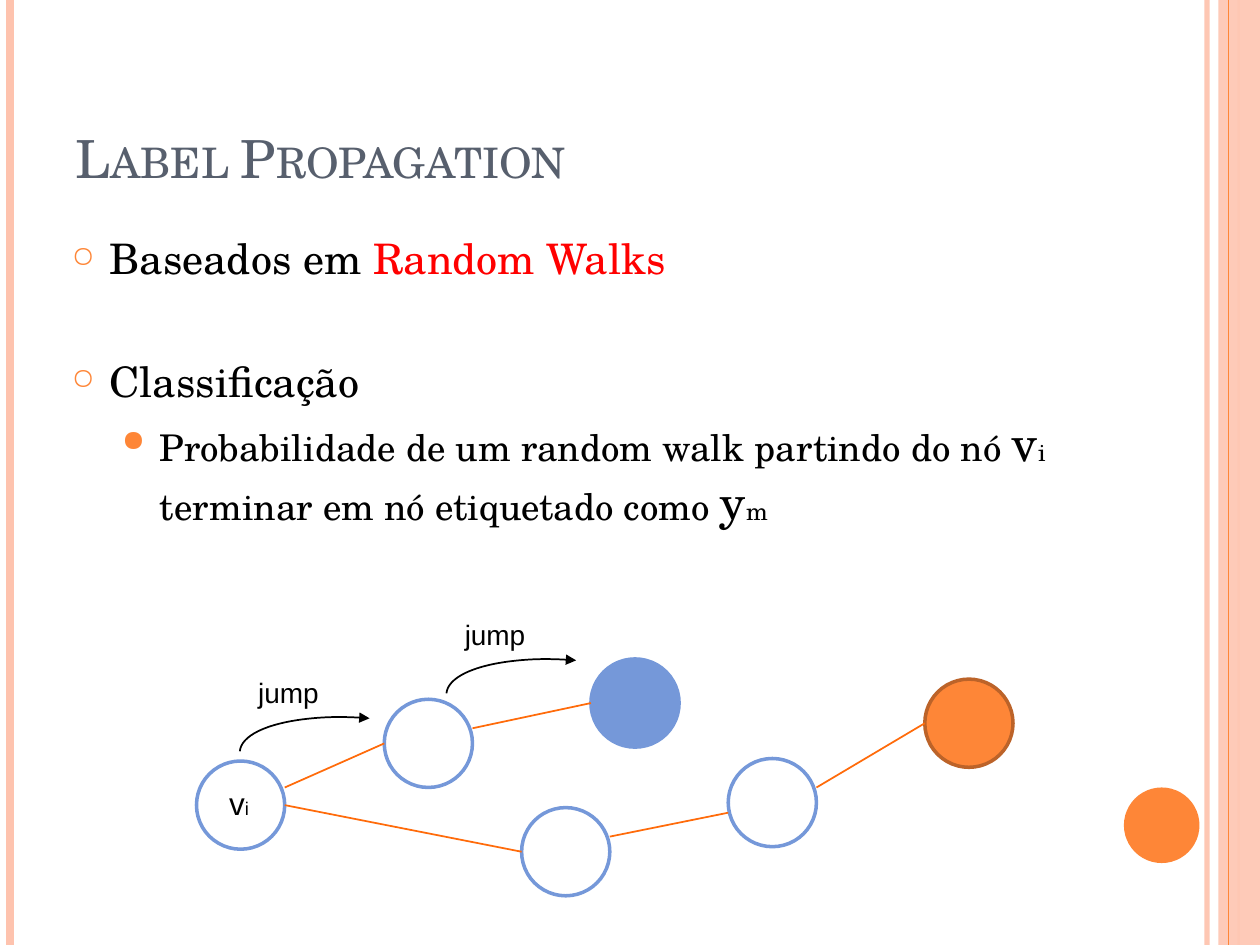
from lxml.etree import SubElement
from pptx import Presentation
from pptx.dml.color import RGBColor as RGB
from pptx.enum.shapes import MSO_CONNECTOR as CONN, MSO_SHAPE as SHAPE
from pptx.enum.text import MSO_ANCHOR as ANCHOR, MSO_AUTO_SIZE as AUTO
from pptx.oxml.ns import qn
from pptx.util import Inches, Pt

COLORS = {
    "peach": "FEC3AE", "orange": "FE8637", "rust": "BC6329", "edge": "FF6B0A",
    "blue": "7598D9", "title": "575F6D", "black": "000000", "red": "FF0000",
}
SERIF, SANS = "TeX Gyre Schola", "Arial"
COLS, ROWS = 100, 75


def add(parent, tag, **attrs):
    return SubElement(parent, qn(tag), {k: str(v) for k, v in attrs.items()})


class SlideBuilder:
    """Draws on one slide; lengths are columns and rows of the grid."""

    def __init__(self, prs):
        self.slide = prs.slides.add_slide(prs.slide_layouts[6])
        self.shapes = self.slide.shapes
        self.col = prs.slide_width / COLS
        self.row = prs.slide_height / ROWS

    def xy(self, x, y):
        return round(x * self.col), round(y * self.row)

    def paint(self, fill, color, alpha=100):
        fill.solid()
        fill.fore_color.rgb = RGB.from_string(COLORS[color])
        if alpha < 100:
            clr = fill._xPr.find(".//" + qn("a:srgbClr"))
            add(clr, "a:alpha", val=alpha * 1000)

    def shape(self, kind, x, y, w, h, fill=None, line=None, width=2, alpha=100):
        sp = self.shapes.add_shape(kind, *self.xy(x, y), *self.xy(w, h))
        sp.shadow.inherit = False
        if fill:
            self.paint(sp.fill, fill, alpha)
        else:
            sp.fill.background()
        if line:
            self.paint(sp.line.fill, line)
            sp.line.width = Pt(width)
        else:
            sp.line.fill.background()
        return sp

    def line(self, start, end, color, width=1, alpha=100):
        cn = self.shapes.add_connector(
            CONN.STRAIGHT, *self.xy(*start), *self.xy(*end))
        self.paint(cn.line.fill, color, alpha)
        cn.line.width = Pt(width)
        add(cn._element.spPr, "a:effectLst")

    def rule(self, x, color, width, alpha=100):
        self.line((x, 0), (x, ROWS), color, width, alpha)

    def jump(self, x, y):
        """Curved arrow with its label; x, y is the corner of the unturned arc."""
        arc = self.shape(SHAPE.ARC, x, y, 6.9, 20.1, line="black", width=1)
        arc.rotation = 274.7
        add(arc.line._get_or_add_ln(), "a:tailEnd", type="triangle")
        self.label(x - 6.1 + 2.4 * 0, y + 2.7, 6.9, [("jump", 16)])

    def box(self, x, y, w, h, wrap=True):
        tf = self.shapes.add_textbox(*self.xy(x, y), *self.xy(w, h)).text_frame
        tf.word_wrap = wrap
        return tf

    def run(self, p, text, size, font=SERIF, color="black"):
        r = p.add_run()
        r.text = text
        r.font.size, r.font.name = Pt(size), font
        r.font.color.rgb = RGB.from_string(COLORS[color])
        return r

    def label(self, x, y, w, runs, h=3.7):
        tf = self.box(x, y, w, h, wrap=False)
        tf.auto_size = AUTO.SHAPE_TO_FIT_TEXT
        for text, size in runs:
            self.run(tf.paragraphs[0], text, size, SANS)

    def title(self, text):
        tf = self.box(5, 3, 81.7, 12.5)
        tf.vertical_anchor = ANCHOR.BOTTOM
        r = self.run(tf.paragraphs[0], text, 30, color="title")
        r.font._element.set("cap", "small")

    def bullets(self, items):
        tf = self.box(4.7, 18, 81.7, 53.3)
        for i, (level, before, runs) in enumerate(items):
            p = tf.paragraphs[0] if i == 0 else tf.add_paragraph()
            mark, size, margin = [("○", 70, 0.3), ("●", 80, 0.7)][level]
            p.level = level
            p.space_before = Pt(before)
            pPr = p._p.get_or_add_pPr()
            pPr.set("marL", str(Inches(margin)))
            pPr.set("indent", str(Inches(-0.3)))
            add(add(pPr, "a:buClr"), "a:srgbClr", val=COLORS["orange"])
            add(pPr, "a:buSzPct", val=size * 1000)
            add(pPr, "a:buChar", char=mark)
            for text, pt, color in runs:
                self.run(p, text, pt, color=color)


NODE = 7
R = NODE / 2
# name: centre x, centre y, fill, outline
NODES = {
    "start": (19.1, 63.9, None, "blue"),
    "upper": (34, 59, None, "blue"),
    "blue": (50.4, 55.8, "blue", "blue"),
    "lower": (44.9, 67.6, None, "blue"),
    "middle": (61.3, 63.7, None, "blue"),
    "orange": (76.9, 57.4, "orange", "rust"),
}
# left node, height above its centre, right node, height above its centre
EDGES = [
    ("start", 1.4, "upper", 0),
    ("upper", 1.2, "blue", 0),
    ("start", 0, "lower", 0),
    ("lower", 1.2, "middle", -0.8),
    ("middle", 1.2, "orange", 0),
]


def draw_frame(s):
    s.rule(95.8, "peach", 3, 93)
    s.rule(0.8, "peach", 4.5)
    s.rule(98.3, "orange", 1.5, 20)
    s.shape(SHAPE.RECTANGLE, 96.7, 0, 3.3, ROWS, fill="peach", alpha=87)
    s.rule(97.5, "orange", 0.75)
    s.shape(SHAPE.OVAL, 89.2, 62.5, 6, 6, fill="orange")


def draw_graph(s):
    for x, y, fill, line in NODES.values():
        s.shape(SHAPE.OVAL, x - R, y - R, NODE, NODE, fill, line)
    for left, up_left, right, up_right in EDGES:
        x1, y1 = NODES[left][:2]
        x2, y2 = NODES[right][:2]
        s.line((x1 + R, y1 - up_left), (x2 - R, y2 - up_right), "edge")
    s.label(17.2, 61.7, 3.7, [("v", 18), ("i", 10.5)], h=4)
    s.jump(25.6, 50.4)
    s.jump(42, 45.8)


def main():
    prs = Presentation()
    prs.slide_width, prs.slide_height = Inches(10), Inches(7.5)
    s = SlideBuilder(prs)
    draw_frame(s)
    s.title("Label Propagation")
    s.bullets([
        (0, 0, [("Baseados em ", 24, "black"), ("Random Walks", 24, "red")]),
        (0, 41, [("Classificação", 24, "black")]),
        (1, 4.2, [
            ("Probabilidade de um random walk partindo do nó ", 21, "black"),
            ("v", 28, "black"), ("i", 14, "black"),
            (" terminar em nó etiquetado como ", 21, "black"),
            ("y", 28, "black"), ("m", 14, "black"),
        ]),
    ])
    draw_graph(s)
    prs.save("out.pptx")


if __name__ == "__main__":
    main()
